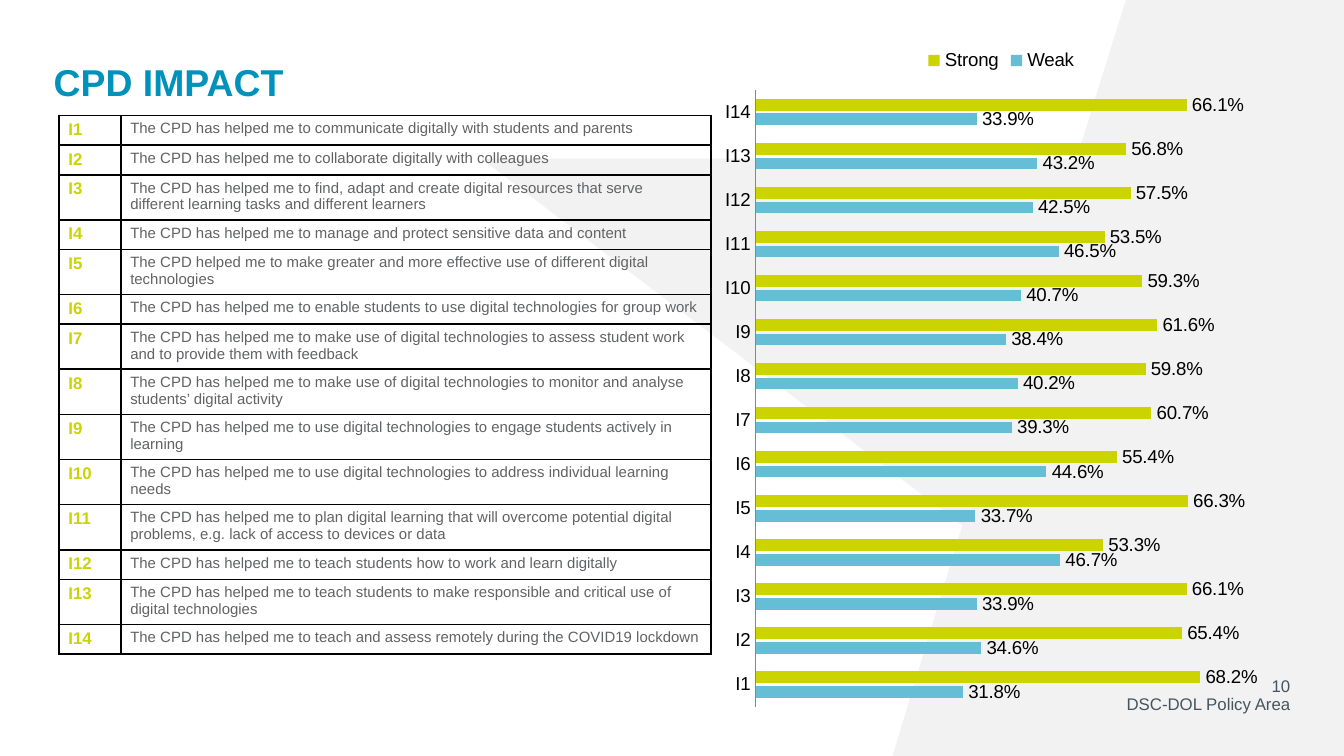
from lxml.etree import SubElement
from pptx import Presentation
from pptx.chart.data import CategoryChartData
from pptx.dml.color import RGBColor
from pptx.enum.chart import (XL_CHART_TYPE, XL_LABEL_POSITION, XL_LEGEND_POSITION,
                             XL_TICK_LABEL_POSITION, XL_TICK_MARK)
from pptx.enum.text import MSO_ANCHOR, PP_ALIGN
from pptx.oxml.ns import qn
from pptx.util import Inches, Pt

FONT = "Arial"
BLUE = RGBColor(0x00, 0x92, 0xBB)
SKY = RGBColor(0x66, 0xBE, 0xD6)
LIME = RGBColor(0xCB, 0xD3, 0x00)
GRAY = RGBColor(0x61, 0x62, 0x64)
SLATE = RGBColor(0x45, 0x55, 0x60)
PALE = RGBColor(0xF2, 0xF2, 0xF2)
AXIS_GRAY = RGBColor(0x86, 0x86, 0x86)
BLACK = RGBColor(0, 0, 0)

STATEMENTS = [
    "The CPD has helped me to communicate digitally with students and parents",
    "The CPD has helped me to collaborate digitally with colleagues",
    "The CPD has helped me to find, adapt and create digital resources that serve "
    "different learning tasks and different learners",
    "The CPD has helped me to manage and protect sensitive data and content",
    "The CPD helped me to make greater and more effective use of different digital technologies",
    "The CPD has helped me to enable students to use digital technologies for group work",
    "The CPD has helped me to make use of digital technologies to assess student work "
    "and to provide them with feedback",
    "The CPD has helped me to make use of digital technologies to monitor and analyse "
    "students’ digital activity",
    "The CPD has helped me to use digital technologies to engage students actively in learning",
    "The CPD has helped me to use digital technologies to address individual learning needs",
    "The CPD has helped me to plan digital learning that will overcome potential digital "
    "problems, e.g. lack of access to devices or data",
    "The CPD has helped me to teach students how to work and learn digitally",
    "The CPD has helped me to teach students to make responsible and critical use of "
    "digital technologies",
    "The CPD has helped me to teach and assess remotely during the COVID19 lockdown",
]
CODES = [f"I{number}" for number in range(1, len(STATEMENTS) + 1)]
WEAK = [0.318, 0.346, 0.339, 0.467, 0.337, 0.446, 0.393,
        0.402, 0.384, 0.407, 0.465, 0.425, 0.432, 0.339]
STRONG = [round(1 - share, 3) for share in WEAK]


def add_run(paragraph, text, size, color, bold=False):
    run = paragraph.add_run()
    run.text = text
    run.font.name = FONT
    run.font.size = Pt(size)
    run.font.bold = bold
    run.font.color.rgb = color


def add_text(slide, box, text, size, color, bold=False,
             align=PP_ALIGN.LEFT, anchor=MSO_ANCHOR.TOP):
    frame = slide.shapes.add_textbox(*map(Inches, box)).text_frame
    frame.margin_left = frame.margin_right = frame.margin_top = frame.margin_bottom = 0
    frame.word_wrap = True
    frame.vertical_anchor = anchor
    paragraph = frame.paragraphs[0]
    paragraph.alignment = align
    add_run(paragraph, text, size, color, bold)
    return paragraph


def add_backdrop(slide, left, top, width, height):
    """Pale folded band; its corners are measured from the top left of the box."""
    corners = [(width, 0), (width, height), (3.06, height), (3.58, 3.92),
               (0, 1.19), (4.43, 1.19)]
    points = [(Inches(left + x), Inches(top + y)) for x, y in corners]
    builder = slide.shapes.build_freeform(Inches(left + 4.8), Inches(top), scale=1.0)
    builder.add_line_segments(points, close=True)
    shape = builder.convert_to_shape()
    shape.shadow.inherit = False
    shape.fill.solid()
    shape.fill.fore_color.rgb = PALE
    shape.line.fill.background()


def add_cell_borders(cell):
    properties = cell._tc.get_or_add_tcPr()
    for index, side in enumerate(("lnL", "lnR", "lnT", "lnB")):
        line = properties.makeelement(qn(f"a:{side}"), {"w": str(Pt(1))})
        fill = SubElement(line, qn("a:solidFill"))
        SubElement(fill, qn("a:srgbClr"), val=str(BLACK))
        properties.insert(index, line)


def add_statement_table(slide, left, top, width, height):
    code_width = 0.46
    row_height = 0.21  # rows with two lines grow to fit
    frame = slide.shapes.add_table(len(CODES), 2, *map(Inches, (left, top, width, height)))
    table = frame.table
    table.first_row = table.horz_banding = False
    table.columns[0].width = Inches(code_width)
    table.columns[1].width = Inches(width - code_width)
    for row, code, statement in zip(table.rows, CODES, STATEMENTS):
        row.height = Inches(row_height)
        styles = ((code, 9, LIME, True), (statement, 8, GRAY, False))
        for cell, style in zip(row.cells, styles):
            cell.fill.background()
            cell.margin_left = cell.margin_right = Pt(5)
            cell.margin_top = cell.margin_bottom = Pt(2.5)
            add_run(cell.text_frame.paragraphs[0], *style)
            add_cell_borders(cell)


def add_impact_chart(slide, left, top, width, height):
    data = CategoryChartData(number_format="0.0%")
    data.categories = CODES
    data.add_series("Weak", WEAK)
    data.add_series("Strong", STRONG)
    chart = slide.shapes.add_chart(XL_CHART_TYPE.BAR_CLUSTERED,
                                   *map(Inches, (left, top, width, height)), data).chart
    chart.has_title = False
    chart.font.name = FONT
    chart.font.size = Pt(10)
    chart.font.color.rgb = BLACK
    chart.has_legend = True
    chart.legend.position = XL_LEGEND_POSITION.TOP
    chart.legend.include_in_layout = False

    chart.category_axis.major_tick_mark = XL_TICK_MARK.NONE
    chart.category_axis.tick_label_position = XL_TICK_LABEL_POSITION.NEXT_TO_AXIS
    chart.category_axis.format.line.color.rgb = AXIS_GRAY
    value_axis = chart.value_axis
    value_axis.visible = False
    value_axis.has_major_gridlines = False
    value_axis.minimum_scale = 0
    value_axis.maximum_scale = 0.8

    plot = chart.plots[0]
    plot.vary_by_categories = False
    plot.gap_width = 150
    plot.overlap = -25
    for series, color in zip(plot.series, (SKY, LIME)):
        series.format.fill.solid()
        series.format.fill.fore_color.rgb = color
        labels = series.data_labels
        labels.show_value = True
        labels.number_format = "0.0%"
        labels.number_format_is_linked = False
        labels.position = XL_LABEL_POSITION.OUTSIDE_END


def add_footer(slide, left, top, width, line_height):
    for index, text in enumerate(("10", "DSC-DOL Policy Area")):
        add_text(slide, (left, top + index * line_height, width, line_height), text, 9, SLATE,
                 align=PP_ALIGN.RIGHT, anchor=MSO_ANCHOR.MIDDLE)


def main():
    presentation = Presentation()
    presentation.slide_width = Inches(10)
    presentation.slide_height = Inches(10 * 9 / 16)
    slide = presentation.slides.add_slide(presentation.slide_layouts[6])
    add_backdrop(slide, 3.58, -0.01, 6.42, 5.64)
    title = add_text(slide, (0.4, 0.48, 2.17, 0.6), "CPD IMPACT", 20, BLUE, bold=True)
    title.line_spacing = 0.9
    add_footer(slide, 6.23, 5.03, 3.37, 0.14)
    add_impact_chart(slide, 5.31, 0.26, 4.28, 5.1)
    add_statement_table(slide, 0.44, 0.86, 4.85, 4.2)
    presentation.save("out.pptx")


if __name__ == "__main__":
    main()
